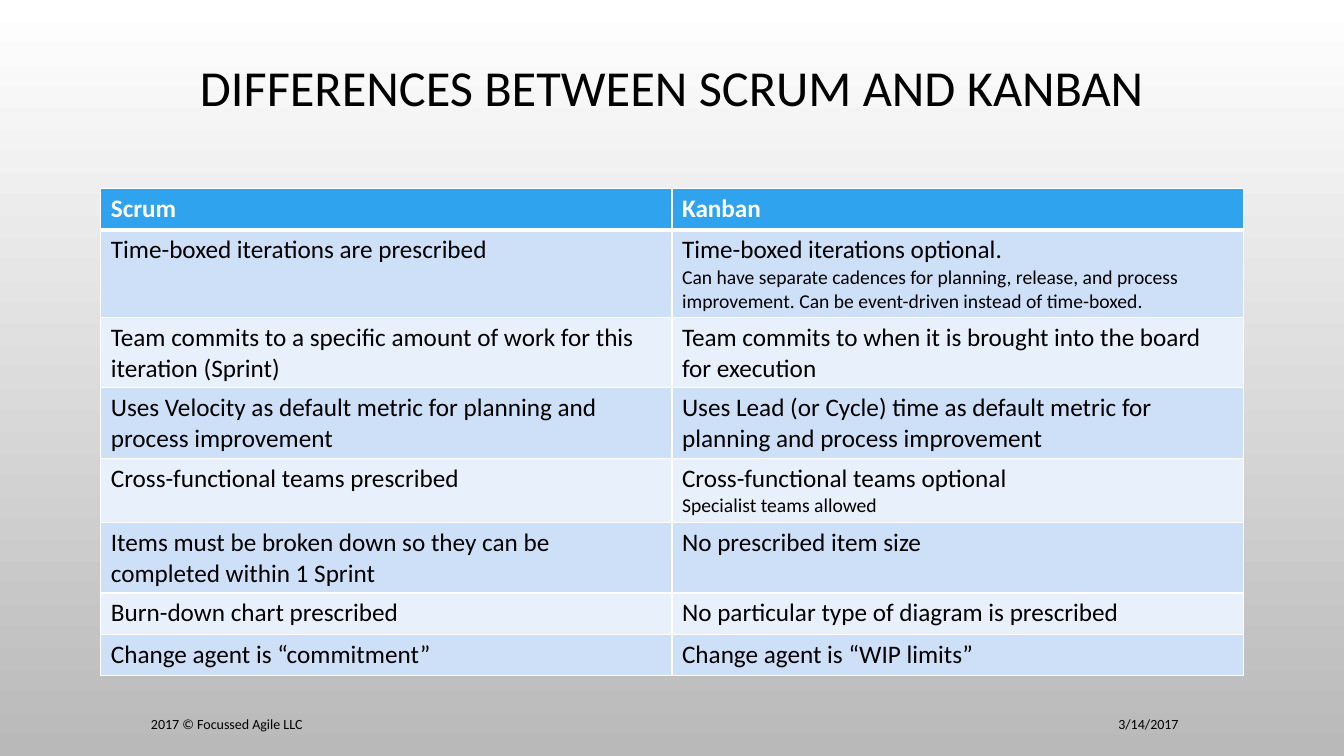
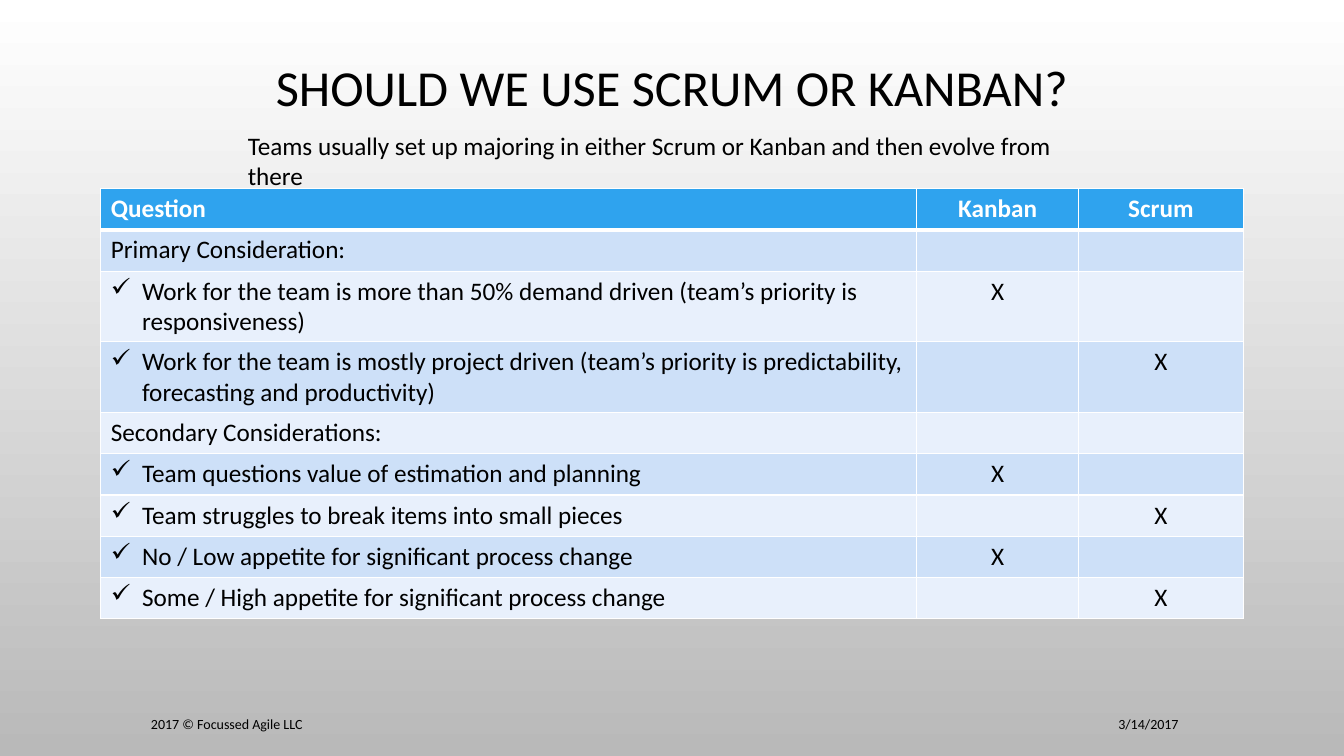
from lxml import etree
from pptx import Presentation
from pptx.dml.color import RGBColor
from pptx.enum.text import MSO_ANCHOR, PP_ALIGN
from pptx.oxml.ns import qn
from pptx.util import Inches, Pt

LEFT, CENTER, RIGHT = PP_ALIGN.LEFT, PP_ALIGN.CENTER, PP_ALIGN.RIGHT
TOP, MIDDLE = MSO_ANCHOR.TOP, MSO_ANCHOR.MIDDLE

UNIT = Inches(1) / 3
GRID_COLUMNS, GRID_ROWS = 40, 22.5
ROW_HEIGHT = 1.23
INDENT = Inches(0.31)

WHITE, BLACK, GREY = "FFFFFF", "000000", "B9B9B9"
HEADER_FILL = "2FA3EE"
BAND_FILLS = ("CDE0F8", "E8F0FC")

TITLE_BOX = (3, 0.06, 34, 5.25)
SUBTITLE_BOX = (7.08, 3.72, 25.83, 1.2)
TABLE_BOX = (3, 5.61, 34)
COPYRIGHT_BOX = (4.2, 20.94, 21.9, 1.2)
DATE_BOX = (26.37, 20.94, 9, 1.2)

BODY = {"name": "Calibri", "size": Pt(18), "bold": False}
HEADER = {**BODY, "bold": True}
NOTE = {**BODY, "size": Pt(14)}
TITLE = {**BODY, "size": Pt(36)}
FOOTER = {**BODY, "size": Pt(10)}

DIFFERENCES = [
    ("Scrum", "Kanban"),
    ("Time-boxed iterations are prescribed",
     ("Time-boxed iterations optional.",
      "Can have separate cadences for planning, release, and process "
      "improvement. Can be event-driven instead of time-boxed.")),
    ("Team commits to a specific amount of work for this iteration (Sprint)",
     "Team commits to when it is brought into the board for execution"),
    ("Uses Velocity as default metric for planning and process improvement",
     "Uses Lead (or Cycle) time as default metric for planning and process improvement"),
    ("Cross-functional teams prescribed",
     ("Cross-functional teams optional", "Specialist teams allowed")),
    ("Items must be broken down so they can be completed within 1 Sprint",
     "No prescribed item size"),
    ("Burn-down chart prescribed", "No particular type of diagram is prescribed"),
    ("Change agent is “commitment”", "Change agent is “WIP limits”"),
]

QUESTIONS = [
    ("Question", "Kanban", "Scrum"),
    ("Primary Consideration:", "", ""),
    ("Work for the team is more than 50% demand driven "
     "(team’s priority is responsiveness)", "X", ""),
    ("Work for the team is mostly project driven "
     "(team’s priority is predictability, forecasting and productivity)", "", "X"),
    ("Secondary Considerations:", "", ""),
    ("Team questions value of estimation and planning", "X", ""),
    ("Team struggles to break items into small pieces", "", "X"),
    ("No / Low appetite for significant process change", "X", ""),
    ("Some / High appetite for significant process change", "", "X"),
]


def color(value):
    """Turn a hex string into a colour."""
    return RGBColor.from_string(value)


def grid(*lengths):
    """Turn grid units into slide lengths."""
    return [round(length * UNIT) for length in lengths]


def write(para, text, formats, ink=BLACK, align=LEFT):
    """Fill one paragraph with formatted text."""
    para.alignment = align
    span = para.add_run()
    span.text = text
    for name, value in formats.items():
        setattr(span.font, name, value)
    span.font.color.rgb = color(ink)


def add_text(page, place, text, formats, align=LEFT, anchor=MIDDLE, spacing=None):
    """Place a wrapped line of text in a grid box."""
    frame = page.shapes.add_textbox(*grid(*place)).text_frame
    frame.word_wrap = True
    frame.vertical_anchor = anchor
    para = frame.paragraphs[0]
    para.line_spacing = spacing
    write(para, text, formats, align=align)


def add_check(para):
    """Give a paragraph a hanging check mark."""
    properties = para._p.get_or_add_pPr()
    properties.set("marL", str(INDENT))
    properties.set("indent", str(-INDENT))
    etree.SubElement(properties, qn("a:buChar")).set("char", "✓")


def add_borders(cell, top, bottom):
    """Draw white cell borders with the given top and bottom widths."""
    properties = cell._tc.get_or_add_tcPr()
    for side, points in (("L", 1), ("R", 1), ("T", top), ("B", bottom)):
        line = etree.SubElement(properties, qn(f"a:ln{side}"), w=str(Pt(points)))
        fill = etree.SubElement(line, qn("a:solidFill"))
        etree.SubElement(fill, qn("a:srgbClr"), val=WHITE)


def fill_cell(cell, content, row, align, checked):
    """Style one table cell and write its main text and notes."""
    is_header = row == 0
    add_borders(cell, 3 if row == 1 else 1, 3 if is_header else 1)
    cell.fill.solid()
    cell.fill.fore_color.rgb = color(HEADER_FILL if is_header else BAND_FILLS[(row - 1) % 2])
    if not content:
        return
    main, *notes = (content,) if isinstance(content, str) else content
    frame = cell.text_frame
    para = frame.paragraphs[0]
    if checked:
        add_check(para)
    write(para, main, HEADER if is_header else BODY, WHITE if is_header else BLACK, align)
    for note in notes:
        write(frame.add_paragraph(), note, NOTE, align=align)


def add_grid_table(page, place, rows, weights, aligns, checklist=False):
    """Place a banded table whose columns share the width by weight."""
    left, top, width = place
    box = grid(left, top, width, ROW_HEIGHT * len(rows))
    table = page.shapes.add_table(len(rows), len(weights), *box).table
    table.horz_banding = False
    for column, weight in zip(table.columns, weights):
        column.width = round(box[2] * weight / sum(weights))
    for row, contents in enumerate(rows):
        table.rows[row].height = grid(ROW_HEIGHT)[0]
        marked = checklist and row > 0 and any(contents[1:])
        for column, content in enumerate(contents):
            fill_cell(table.cell(row, column), content, row, aligns[column],
                      marked and column == 0)


def add_page(deck, title):
    """Add a slide with the shared background, title and footer."""
    page = deck.slides.add_slide(deck.slide_layouts[6])
    fill = page.background.fill
    fill.gradient()
    fill.gradient_angle = 270
    for stop, value, position in zip(fill.gradient_stops, (WHITE, GREY), (0, 1)):
        stop.color.rgb = color(value)
        stop.position = position
    add_text(page, TITLE_BOX, title, TITLE, CENTER, spacing=0.9)
    add_text(page, DATE_BOX, "3/14/2017", FOOTER, RIGHT)
    add_text(page, COPYRIGHT_BOX, "2017 © Focussed Agile LLC", FOOTER)
    return page


def add_differences(deck):
    """Build the slide that compares the two methods."""
    page = add_page(deck, "DIFFERENCES BETWEEN SCRUM AND KANBAN")
    add_grid_table(page, TABLE_BOX, DIFFERENCES, (1, 1), (LEFT, LEFT))


def add_questions(deck):
    """Build the slide that helps to choose a method."""
    page = add_page(deck, "SHOULD WE USE SCRUM OR KANBAN?")
    add_grid_table(page, TABLE_BOX, QUESTIONS, (8.09, 1.61, 1.63),
                   (LEFT, CENTER, CENTER), checklist=True)
    add_text(page, SUBTITLE_BOX,
             "Teams usually set up majoring in either Scrum or Kanban "
             "and then evolve from there", BODY, anchor=TOP)


def main():
    """Build and save the deck."""
    deck = Presentation()
    deck.slide_width, deck.slide_height = grid(GRID_COLUMNS, GRID_ROWS)
    add_differences(deck)
    add_questions(deck)
    deck.save("out.pptx")


if __name__ == "__main__":
    main()
